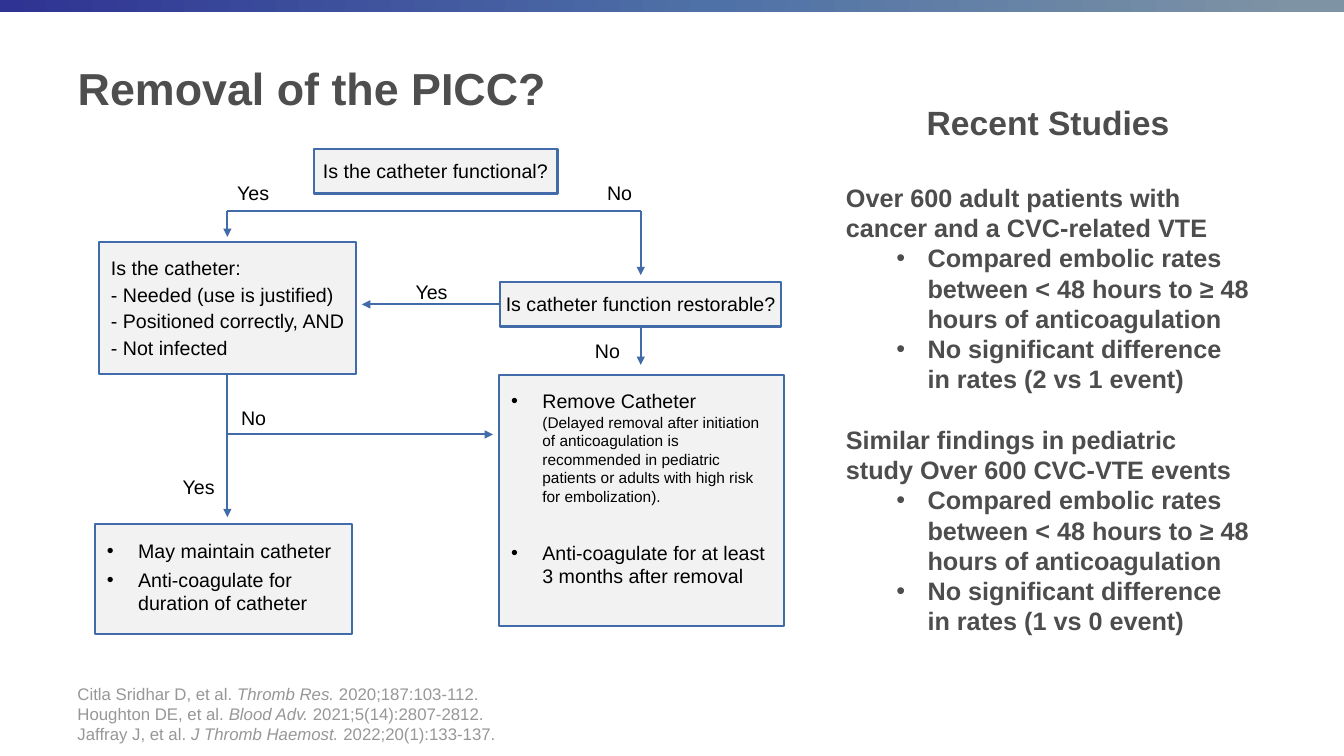
"""Build the catheter removal decision slide with its flowchart and study summary."""
from copy import deepcopy
from dataclasses import dataclass

from lxml import etree
from pptx import Presentation, util as u
from pptx.dml import color
from pptx.enum import shapes, text
from pptx.oxml import ns

TITLE = [("title", "Removal of the PICC?")]
COMPARISON = "Compared embolic rates between < 48 hours to ≥ 48 hours of anticoagulation"
STUDIES = [
    ("heading", "Recent Studies"),
    ("study", "Over 600 adult patients with cancer and a CVC-related VTE"),
    ("finding", COMPARISON),
    ("finding", "No significant difference in rates (2 vs 1 event)"),
    ("next_study", "Similar findings in pediatric study Over 600 CVC-VTE events"),
    ("finding", COMPARISON),
    ("finding", "No significant difference in rates (1 vs 0 event)"),
]
REFERENCES = [
    ("reference", "Citla Sridhar D, et al. ", "Thromb Res. ", "2020;187:103-112."),
    ("reference", "Houghton DE, et al. ", "Blood Adv. ", "2021;5(14):2807-2812."),
    ("reference", "Jaffray J, et al. ", "J Thromb Haemost. ", "2022;20(1):133-137."),
]
# name: (left, top, width, height), (left, top, right inset), paragraphs
BOXES = {
    "functional": ((3.11, 1.48, 2.42, 0.44), None, [
        ("question", "Is the catheter functional?")]),
    "restorable": ((4.96, 2.8, 2.79, 0.44), None, [
        ("question", "Is catheter function restorable?")]),
    "criteria": ((0.98, 2.4, 2.55, 1.31), (0.12, 0.11, 0.04), [
        ("criterion", "Is the catheter:"),
        ("criterion", "- Needed (use is justified)"),
        ("criterion", "- Positioned correctly, AND"),
        ("criterion", "- Not infected")]),
    "maintain": ((0.94, 5.2, 2.55, 1.09), (0.12, 0.15, 0.12), [
        ("action", "May maintain catheter"),
        ("action", "Anti-coagulate for duration of catheter")]),
    "remove": ((4.95, 3.72, 2.83, 2.49), (0.12, 0.14, 0.12), [
        ("removal", "Remove Catheter"),
        ("detail", "(Delayed removal after initiation of anticoagulation is recommended "
                   "in pediatric patients or adults with high risk for embolization)."),
        ("follow_up", "Anti-coagulate for at least 3 months after removal")]),
}
ANSWERS = [
    ("Yes", 2.25, 1.75), ("No", 5.92, 1.75), ("Yes", 4.02, 2.73),
    ("No", 5.8, 3.31), ("No", 2.29, 3.98), ("Yes", 1.71, 4.66),
]
ANSWER_WIDTH = {"Yes": 0.52, "No": 0.45}
BAR_STOPS = [(0, "2F3393"), (0.53, "4E71A7"), (0.97, "7E93A4")]
LEFT, BOTTOM = 1, 2
BRANCH_Y, REMOVE_Y = 2.09, 4.31


@dataclass
class Theme:
    """Colours, font and type sizes of the slide."""
    font: str = "Arial"
    title: str = "4D4E4D"
    body: str = "4D4D4D"
    muted: str = "979797"
    ink: str = "000000"
    box: str = "F2F2F2"
    line: str = "416BA9"
    title_size: int = 32
    heading_size: int = 24
    body_size: int = 18
    box_size: int = 14
    reference_size: int = 12
    detail_size: int = 11
    line_width: float = 1.5


THEME = Theme()
CENTER = text.PP_ALIGN.CENTER
STUDY = {"size": THEME.body_size, "color": THEME.body, "bold": True}
BOX = {"size": THEME.box_size, "color": THEME.ink}
LISTED = {**BOX, "left": 0.31, "bullet": "•"}
STYLES = {
    "title": {"size": THEME.title_size, "color": THEME.title, "bold": True},
    "heading": {**STUDY, "size": THEME.heading_size, "alignment": CENTER, "after": 28.7},
    "study": STUDY,
    "next_study": {**STUDY, "before": 21.6},
    "finding": {**STUDY, "left": 0.81, "bullet": "•"},
    "reference": {"size": THEME.reference_size, "color": THEME.muted},
    "question": {**BOX, "alignment": CENTER},
    "criterion": {**BOX, "spacing": u.Pt(19)},
    "action": {**LISTED, "after": 3.4},
    "removal": LISTED,
    "detail": {**BOX, "size": THEME.detail_size, "left": 0.31},
    "follow_up": {**LISTED, "before": 25.4},
}


def rgb(value):
    return color.RGBColor.from_string(value)


def set_attributes(target, values):
    for name, value in values.items():
        setattr(target, name, value)


def set_bullet(paragraph, left, bullet):
    properties = paragraph._p.get_or_add_pPr()
    properties.set("marL", str(u.Inches(left)))
    properties.set("indent", str(u.Inches(-0.31 if bullet else 0)))
    if bullet:
        etree.SubElement(properties, ns.qn("a:buFont")).set("typeface", THEME.font)
        etree.SubElement(properties, ns.qn("a:buChar")).set("char", bullet)
    else:
        etree.SubElement(properties, ns.qn("a:buNone"))


def write(shape, paragraphs, insets=(0.1, 0.05, 0.1), anchor=text.MSO_ANCHOR.TOP, wrap=True):
    left, top, right = map(u.Inches, insets)
    frame = shape.text_frame
    set_attributes(frame, {
        "auto_size": text.MSO_AUTO_SIZE.NONE, "word_wrap": wrap, "vertical_anchor": anchor,
        "margin_left": left, "margin_right": right, "margin_top": top,
        "margin_bottom": u.Inches(0.05)})
    for index, (style_name, *parts) in enumerate(paragraphs):
        style = STYLES[style_name]
        paragraph = frame.add_paragraph() if index else frame.paragraphs[0]
        set_bullet(paragraph, style.get("left", 0), style.get("bullet"))
        set_attributes(paragraph, {
            "alignment": style.get("alignment", text.PP_ALIGN.LEFT),
            "line_spacing": style.get("spacing", 1.0),
            "space_before": u.Pt(style.get("before", 0)),
            "space_after": u.Pt(style.get("after", 0))})
        for position, part in enumerate(parts):
            run = paragraph.add_run()
            run.text = part
            set_attributes(run.font, {
                "name": THEME.font, "size": u.Pt(style["size"]),
                "bold": style.get("bold", False), "italic": position % 2 == 1})
            run.font.color.rgb = rgb(style["color"])


def place(shape, left, top, width, height):
    set_attributes(shape, {"left": u.Inches(left), "top": u.Inches(top),
                           "width": u.Inches(width), "height": u.Inches(height)})
    return shape


def add_rectangle(slide, bounds):
    shape = slide.shapes.add_shape(shapes.MSO_SHAPE.RECTANGLE, *map(u.Inches, bounds))
    shape.shadow.inherit = False
    return shape


def add_bar(slide):
    bar = add_rectangle(slide, (0, 0, 13.33, 0.12))
    bar.line.fill.background()
    bar.fill.gradient()
    bar.fill.gradient_angle = 0
    stops = bar._element.spPr.find(".//" + ns.qn("a:gsLst"))
    stops.append(deepcopy(stops[0]))
    for stop, (position, value) in zip(bar.fill.gradient_stops, BAR_STOPS):
        stop.position = position
        stop.color.rgb = rgb(value)


def add_box(slide, bounds, insets, paragraphs):
    box = add_rectangle(slide, bounds)
    box.fill.solid()
    box.fill.fore_color.rgb = rgb(THEME.box)
    box.line.color.rgb = rgb(THEME.line)
    box.line.width = u.Pt(THEME.line_width)
    if insets:
        write(box, paragraphs, insets)
    else:
        write(box, paragraphs, (0, 0.03, 0), text.MSO_ANCHOR.MIDDLE, wrap=False)
    return box


def add_line(slide, start, end, source=None, site=None, arrow=True):
    line = slide.shapes.add_connector(
        shapes.MSO_CONNECTOR.STRAIGHT, *map(u.Inches, (*start, *end)))
    if source is not None:
        line.begin_connect(source, site)
    line.line.color.rgb = rgb(THEME.line)
    line.line.width = u.Pt(THEME.line_width)
    if arrow:
        etree.SubElement(line.line._get_or_add_ln(), ns.qn("a:tailEnd")).set("type", "triangle")
    etree.SubElement(line._element.spPr, ns.qn("a:effectLst"))


def add_flowchart(slide):
    boxes = {name: add_box(slide, *content) for name, content in BOXES.items()}
    left, top, width, height = BOXES["criteria"][0]
    yes_x, criteria_right, criteria_bottom = left + width / 2, left + width, top + height
    left, top, width, height = BOXES["restorable"][0]
    no_x, middle, restorable_bottom = left + width / 2, top + height / 2, top + height
    add_line(slide, (yes_x, BRANCH_Y), (no_x, BRANCH_Y), arrow=False)
    add_line(slide, (yes_x, BRANCH_Y), (yes_x, 2.35))
    add_line(slide, (no_x, BRANCH_Y), (no_x, 2.73))
    add_line(slide, (left, middle), (criteria_right + 0.06, middle), boxes["restorable"], LEFT)
    add_line(slide, (no_x, restorable_bottom), (no_x, 3.62), boxes["restorable"], BOTTOM)
    add_line(slide, (yes_x, criteria_bottom), (yes_x, 5.13), boxes["criteria"], BOTTOM)
    add_line(slide, (yes_x, REMOVE_Y), (BOXES["remove"][0][0] - 0.06, REMOVE_Y))
    for answer, left, top in ANSWERS:
        bounds = map(u.Inches, (left, top, ANSWER_WIDTH[answer], 0.34))
        write(slide.shapes.add_textbox(*bounds), [("question", answer)], wrap=False)


def main():
    presentation = Presentation()
    set_attributes(presentation, {"slide_width": u.Inches(13.33), "slide_height": u.Inches(7.5)})
    slide = presentation.slides.add_slide(presentation.slide_layouts[1])
    add_bar(slide)
    title = place(slide.shapes.title, 0.67, 0.22, 11.75, 1.3)
    write(title, TITLE, anchor=text.MSO_ANCHOR.MIDDLE)
    write(place(slide.placeholders[1], 8.29, 0.96, 4.21, 6.06), STUDIES)
    references = slide.shapes.add_textbox(*map(u.Inches, (0.67, 6.73, 11.75, 0.7)))
    write(references, REFERENCES, anchor=text.MSO_ANCHOR.BOTTOM)
    add_flowchart(slide)
    presentation.save("out.pptx")


if __name__ == "__main__":
    main()
